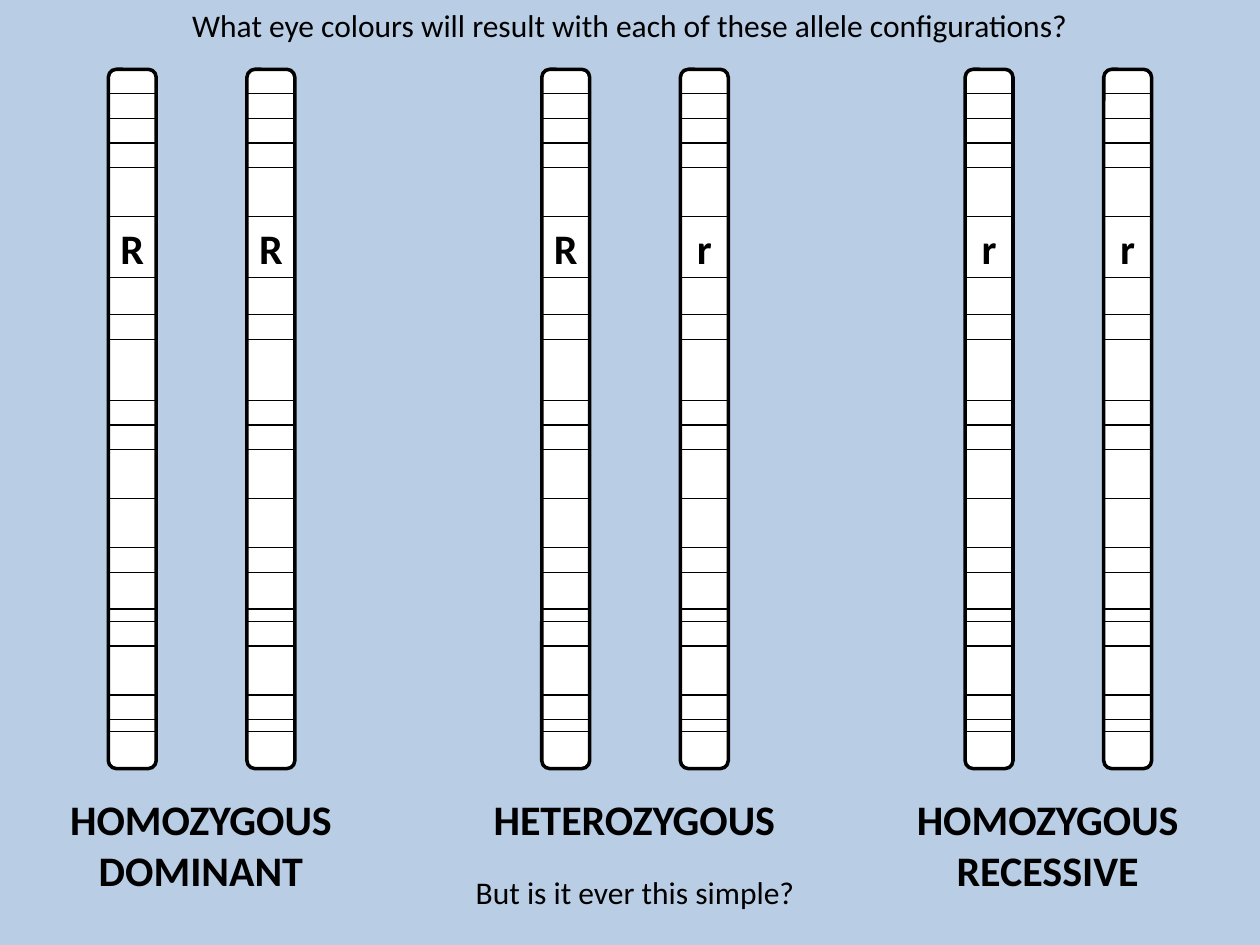
from pptx import Presentation
from pptx.dml.color import RGBColor
from pptx.enum.shapes import MSO_CONNECTOR, MSO_SHAPE
from pptx.enum.text import MSO_AUTO_SIZE, PP_ALIGN
from pptx.oxml.ns import qn
from pptx.util import Inches, Pt
from lxml.etree import SubElement

BLACK = RGBColor(0x00, 0x00, 0x00)
WHITE = RGBColor(0xFF, 0xFF, 0xFF)
PALE_BLUE = RGBColor(0xB9, 0xCD, 0xE5)
FONT = "Calibri"

CHROMOSOME_TOP = 0.55
CHROMOSOME_WIDTH = 0.38
CHROMOSOME_HEIGHT = 5.55
PAIR_PITCH = 1.1
BAND_UNIT = CHROMOSOME_HEIGHT / 57
BAND_STEPS = (2, 4, 6, 8, 12, 17, 20, 22, 27, 29,
              31, 35, 39, 41, 44, 45, 47, 51, 53, 54)

GENOTYPES = (
    (0.86, "RR", 0.23, "HOMOZYGOUS\nDOMINANT"),
    (4.3, "Rr", 3.67, "HETEROZYGOUS"),
    (7.66, "rr", 6.95, "HOMOZYGOUS\nRECESSIVE"),
)


def add_text(shapes, text, left, top, width, height, size=24, bold=True, side_margin=0.1):
    """Add a centred text box with one paragraph per line of text."""
    box = shapes.add_textbox(Inches(left), Inches(top), Inches(width), Inches(height))
    frame = box.text_frame
    frame.word_wrap = True
    frame.auto_size = MSO_AUTO_SIZE.SHAPE_TO_FIT_TEXT
    frame.margin_left = frame.margin_right = Inches(side_margin)
    frame.text = text
    for paragraph in frame.paragraphs:
        paragraph.alignment = PP_ALIGN.CENTER
        font = paragraph.runs[0].font
        font.name = FONT
        font.size = Pt(size)
        font.bold = bold
        font.color.rgb = BLACK


def add_band(shapes, left, top):
    """Add one thin horizontal band line across a chromosome."""
    band = shapes.add_connector(
        MSO_CONNECTOR.STRAIGHT, Inches(left), Inches(top),
        Inches(left + CHROMOSOME_WIDTH), Inches(top))
    band.line.color.rgb = BLACK
    band.line.width = Pt(0.75)
    SubElement(band._element.spPr, qn("a:effectLst"))


def add_chromosome(shapes, left):
    """Add a rounded chromosome with its bands."""
    body = shapes.add_shape(
        MSO_SHAPE.ROUNDED_RECTANGLE, Inches(left), Inches(CHROMOSOME_TOP),
        Inches(CHROMOSOME_WIDTH), Inches(CHROMOSOME_HEIGHT))
    body.shadow.inherit = False
    body.fill.solid()
    body.fill.fore_color.rgb = WHITE
    body.line.color.rgb = BLACK
    body.line.width = Pt(2)
    for step in BAND_STEPS:
        add_band(shapes, left, CHROMOSOME_TOP + step * BAND_UNIT)


def add_chromosome_pair(slide, left, alleles):
    """Add a grouped pair of chromosomes marked with their alleles."""
    shapes = slide.shapes.add_group_shape().shapes
    lefts = [left + index * PAIR_PITCH for index in range(len(alleles))]
    for chromosome_left in lefts:
        add_chromosome(shapes, chromosome_left)
    for chromosome_left, allele in zip(lefts, alleles):
        add_text(shapes, allele, chromosome_left, 1.72, CHROMOSOME_WIDTH, 0.5, side_margin=0)


def main():
    """Build the allele slide and save it."""
    presentation = Presentation()
    presentation.slide_width = Inches(10)
    presentation.slide_height = Inches(7.5)
    slide = presentation.slides.add_slide(presentation.slide_layouts[6])
    slide.background.fill.solid()
    slide.background.fill.fore_color.rgb = PALE_BLUE

    for left, alleles, label_left, label in GENOTYPES:
        add_chromosome_pair(slide, left, alleles)
        label_height = 0.5 + 0.41 * label.count("\n")
        add_text(slide.shapes, label, label_left, 6.25, 2.73, label_height)

    add_text(slide.shapes, "What eye colours will result with each of these allele configurations?",
             1.25, 0, 7.5, 0.4, size=18, bold=False)
    add_text(slide.shapes, "But is it ever this simple?",
             3.05, 6.88, 3.98, 0.4, size=18, bold=False)
    presentation.save("out.pptx")


if __name__ == "__main__":
    main()
